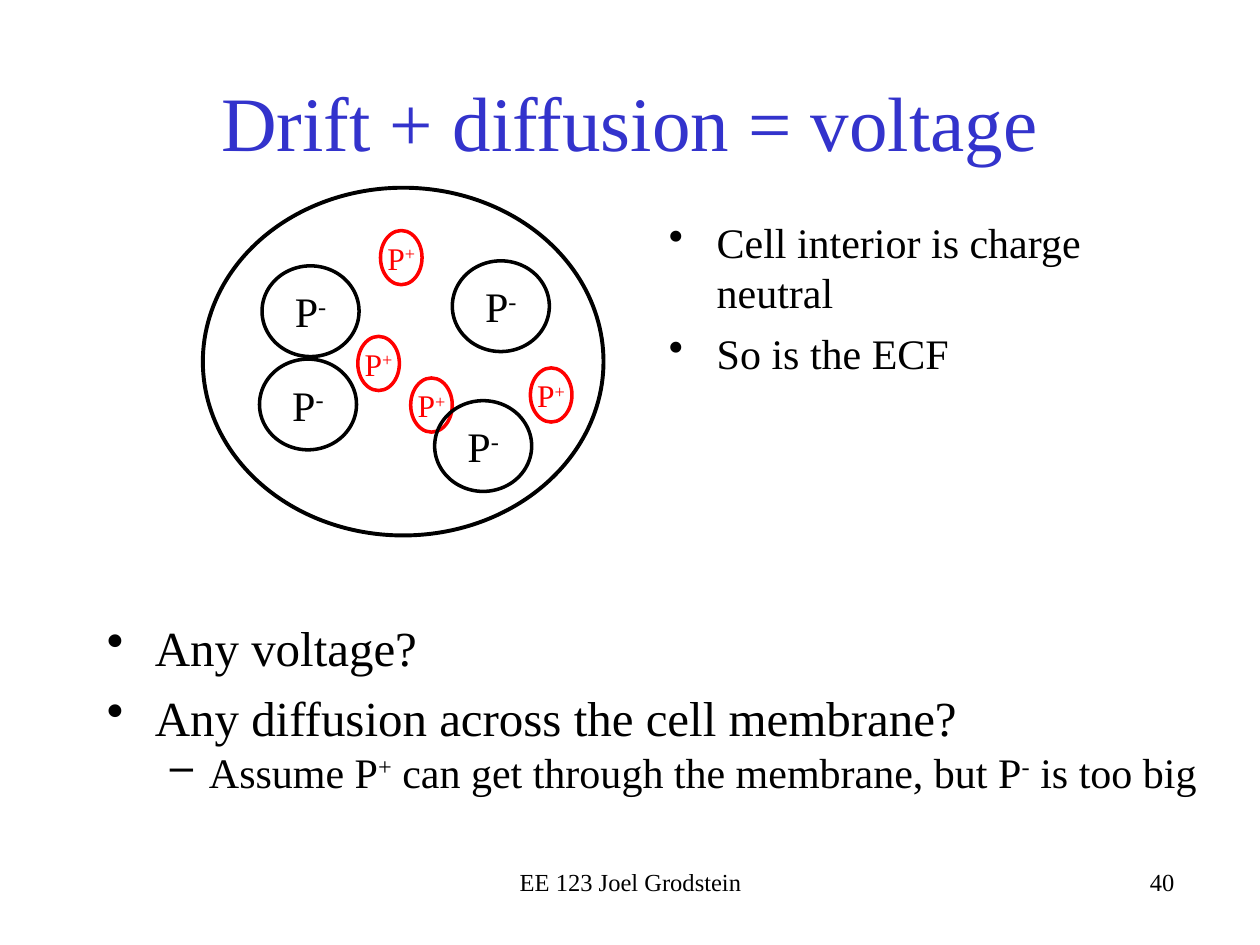
import lxml.etree
import pptx
import pptx.dml.color
import pptx.enum.shapes
import pptx.enum.text
import pptx.oxml.ns
import pptx.util

Inches = pptx.util.Inches
Align = pptx.enum.text.PP_ALIGN
Anchor = pptx.enum.text.MSO_ANCHOR
BLACK = pptx.dml.color.RGBColor(0x00, 0x00, 0x00)
RED = pptx.dml.color.RGBColor(0xFF, 0x00, 0x00)
BLUE = pptx.dml.color.RGBColor(0x33, 0x33, 0xCC)
FONT = "Times New Roman"


def write_text(paragraph, text, size=24, color=BLACK, align=Align.LEFT):
    """Write text into a paragraph, raising the parts between carets."""
    paragraph.alignment = align
    for index, part in enumerate(text.split("^")):
        if not part:
            continue
        run = paragraph.add_run()
        run.text = part
        run.font.name = FONT
        run.font.size = pptx.util.Pt(size)
        run.font.color.rgb = color
        if index % 2:
            run.font._element.set("baseline", "30000")


def add_bullet(paragraph, character, indent, hanging):
    """Give a paragraph a bullet and a hanging indent."""
    properties = paragraph._p.get_or_add_pPr()
    properties.set("marL", str(Inches(indent)))
    properties.set("indent", str(-Inches(hanging)))
    bullet = lxml.etree.SubElement(properties, pptx.oxml.ns.qn("a:buChar"))
    bullet.set("char", character)


def add_title(slide, box, text):
    """Place and format the title placeholder."""
    title = slide.shapes.title
    title.left, title.top, title.width, title.height = map(Inches, box)
    title.text_frame.vertical_anchor = Anchor.MIDDLE
    write_text(title.text_frame.paragraphs[0], text, size=44, color=BLUE, align=Align.CENTER)


def add_text_box(slide, box):
    """Add a wrapping text box and return its text frame."""
    frame = slide.shapes.add_textbox(*map(Inches, box)).text_frame
    frame.word_wrap = True
    return frame


def add_bullet_list(slide, box, items, size):
    """Add a list of (level, text) items, level 1 being dashed and smaller."""
    frame = add_text_box(slide, box)
    for index, (level, text) in enumerate(items):
        paragraph = frame.paragraphs[0] if index == 0 else frame.add_paragraph()
        paragraph.level = level
        if level:
            write_text(paragraph, text, size=24)
            add_bullet(paragraph, "–", 0.81, 0.31)
        else:
            write_text(paragraph, text, size=size)
            paragraph.space_before = pptx.util.Pt(round(size * 0.23, 1))
            add_bullet(paragraph, "•", 0.38, 0.38)


def add_ellipse(slide, box, color, line_width):
    """Add an unfilled ellipse."""
    shape = slide.shapes.add_shape(pptx.enum.shapes.MSO_SHAPE.OVAL, *map(Inches, box))
    shape.shadow.inherit = False
    shape.fill.background()
    shape.line.color.rgb = color
    shape.line.width = pptx.util.Pt(line_width)
    return shape


def add_ion(slide, box, text, size, color):
    """Add an ellipse with a centred ion label."""
    frame = add_ellipse(slide, box, color, 2).text_frame
    frame.margin_left = frame.margin_right = frame.margin_top = frame.margin_bottom = 0
    frame.word_wrap = False
    frame.vertical_anchor = Anchor.MIDDLE
    write_text(frame.paragraphs[0], text, size=size, color=color, align=Align.CENTER)


def add_cell(slide, box):
    """Draw the cell membrane with its positive and negative ions."""
    left, top = box[:2]
    add_ellipse(slide, box, BLACK, 2.25)
    for x, y in ((1.65, 1.51), (2.6, 1.43), (1.23, 1.18), (1.41, 0.34)):
        add_ion(slide, (left + x, top + y, 0.33, 0.43), "P^+^", 18, RED)
    for x, y in ((1.98, 0.58), (1.84, 1.69), (0.45, 1.36), (0.47, 0.62)):
        add_ion(slide, (left + x, top + y, 0.77, 0.72), "P^-^", 24, BLACK)


def add_footer(slide, box, text, align):
    """Add one footer text."""
    write_text(add_text_box(slide, box).paragraphs[0], text, size=14, align=align)


def main():
    """Build and save the slide."""
    presentation = pptx.Presentation()
    presentation.slide_width, presentation.slide_height = Inches(10), Inches(7.5)
    slide = presentation.slides.add_slide(presentation.slide_layouts[5])
    add_title(slide, (0.75, 0.33, 8.5, 1.25), "Drift + diffusion = voltage")
    add_cell(slide, (1.61, 1.49, 3.18, 2.76))
    add_bullet_list(slide, (5.21, 1.67, 4.32, 1.67), (
        (0, "Cell interior is charge neutral"),
        (0, "So is the ECF"),
    ), size=24)
    add_bullet_list(slide, (0.75, 4.85, 8.98, 2.07), (
        (0, "Any voltage?"),
        (0, "Any diffusion across the cell membrane?"),
        (1, "Assume P^+^ can get through the membrane, but P^-^ is too big"),
    ), size=28)
    add_footer(slide, (3.42, 6.83, 3.17, 0.34), "EE 123 Joel Grodstein", Align.CENTER)
    add_footer(slide, (6.25, 6.83, 3.17, 0.5), "40", Align.RIGHT)
    presentation.save("out.pptx")


if __name__ == "__main__":
    main()
